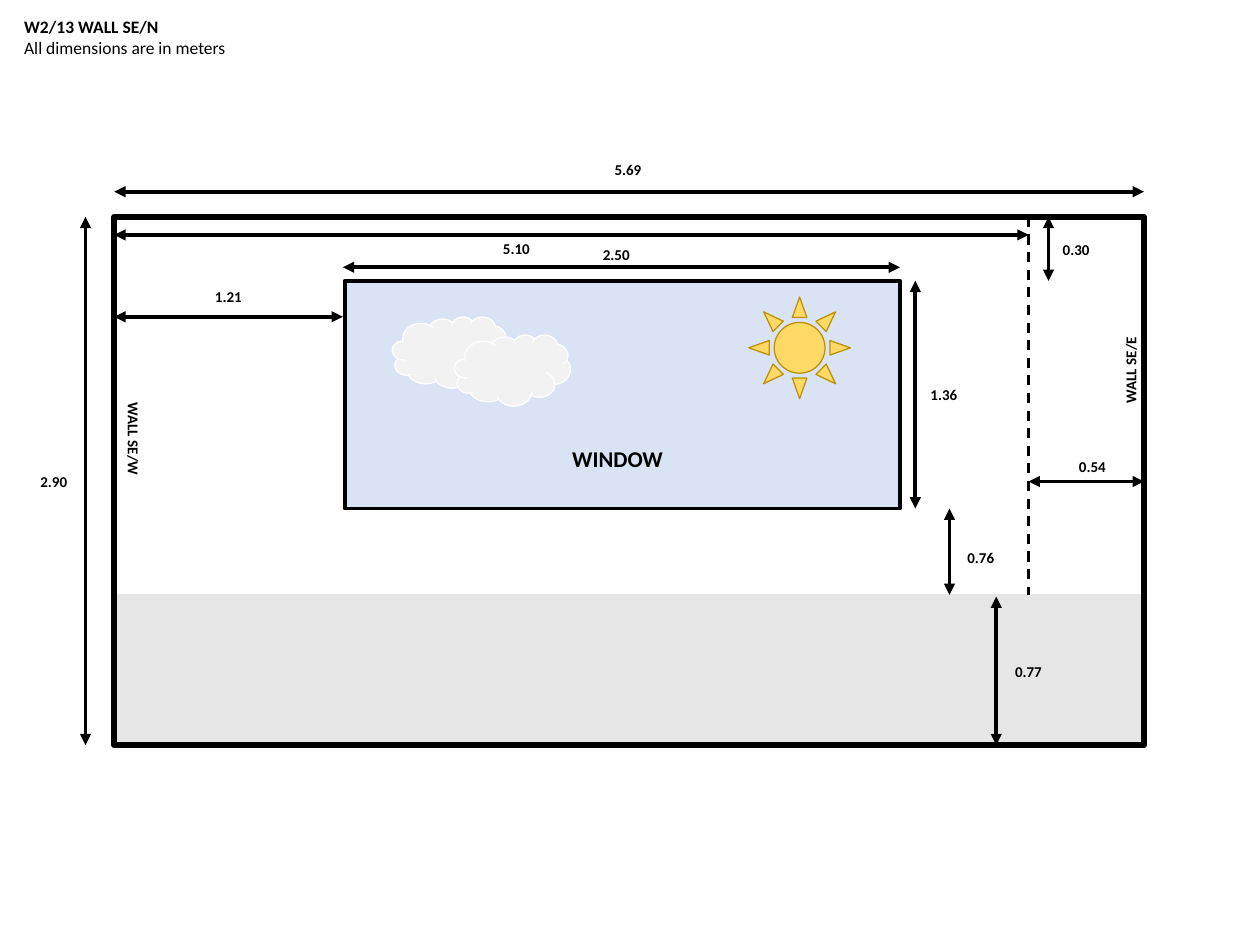
"""Draw the dimensioned elevation of wall SE/N with its window."""
import dataclasses

import lxml.etree
import pptx
import pptx.dml.color
import pptx.enum.dml
import pptx.enum.shapes
import pptx.enum.text
import pptx.oxml.ns
import pptx.util

Inches = pptx.util.Inches
Shape = pptx.enum.shapes.MSO_SHAPE
qn = pptx.oxml.ns.qn


@dataclasses.dataclass(frozen=True)
class Theme:
    font: str = "Calibri"
    ink: str = "000000"
    floor: str = "E7E6E6"
    glass: str = "DAE3F3"
    cloud: str = "F2F2F2"
    cloud_edge: str = "FFFFFF"
    sun: str = "FFD966"
    sun_edge: str = "BF9000"
    label: int = 12
    heading: int = 14
    title: int = 18


def rgb(value):
    return pptx.dml.color.RGBColor.from_string(value)


class Drawing:
    def __init__(self, slide, theme):
        self.slide = slide
        self.theme = theme

    def shape(self, kind, frame, fill, edge, weight):
        shape = self.slide.shapes.add_shape(kind, *map(Inches, frame))
        shape.shadow.inherit = False
        if fill:
            shape.fill.solid()
            shape.fill.fore_color.rgb = rgb(fill)
        else:
            shape.fill.background()
        shape.line.color.rgb = rgb(edge)
        shape.line.width = pptx.util.Pt(weight)

    def line(self, start, end, weight):
        line = self.slide.shapes.add_connector(
            pptx.enum.shapes.MSO_CONNECTOR.STRAIGHT, *map(Inches, start + end))
        line.line.color.rgb = rgb(self.theme.ink)
        line.line.width = pptx.util.Pt(weight)
        lxml.etree.SubElement(line.element.spPr, qn("a:effectLst"))
        return line

    def dashed(self, start, end):
        line = self.line(start, end, 2)
        line.line.dash_style = pptx.enum.dml.MSO_LINE.DASH

    def dimension(self, start, end, value, corner):
        line = self.line(start, end, 3)
        outline = line.line._get_or_add_ln()
        for tag in ("a:headEnd", "a:tailEnd"):
            lxml.etree.SubElement(outline, qn(tag), type="triangle")
        self.text(corner + (0.53, 0.3), [(value, True)], self.theme.label)

    def text(self, frame, lines, size, rotation=0):
        box = self.slide.shapes.add_textbox(*map(Inches, frame))
        box.rotation = rotation
        box.text_frame.word_wrap = True
        box.text_frame.auto_size = pptx.enum.text.MSO_AUTO_SIZE.SHAPE_TO_FIT_TEXT
        for index, (words, bold) in enumerate(lines):
            para = (box.text_frame.add_paragraph() if index
                    else box.text_frame.paragraphs[0])
            span = para.add_run()
            span.text = words
            span.font.color.rgb = rgb(self.theme.ink)
            style = {"name": self.theme.font, "size": pptx.util.Pt(size), "bold": bold}
            for name, value in style.items():
                setattr(span.font, name, value)


def main():
    deck = pptx.Presentation()
    deck.slide_width, deck.slide_height = Inches(14), Inches(10.5)
    theme = Theme()
    drawing = Drawing(deck.slides.add_slide(deck.slide_layouts[6]), theme)

    left, right, top, bottom = 1.27, 12.71, 2.41, 8.28
    floor, partition = 6.61, 11.43
    window_left, window_right, window_top, window_bottom = 3.83, 10, 3.12, 5.65

    wall = (left, top, right - left, bottom - top)
    window = (window_left, window_top,
              window_right - window_left, window_bottom - window_top)
    drawing.shape(Shape.RECTANGLE, (left, floor, right - left, bottom - floor),
                  theme.floor, theme.floor, 1)
    drawing.shape(Shape.RECTANGLE, wall, None, theme.ink, 5)
    drawing.shape(Shape.RECTANGLE, window, theme.glass, theme.ink, 3)
    drawing.dashed((partition, top), (partition, floor))
    for x, y in ((4.36, 3.52), (5.05, 3.72)):
        drawing.shape(Shape.CLOUD, (x, y, 1.29, 0.79),
                      theme.cloud, theme.cloud_edge, 1)
    drawing.shape(Shape.SUN, (8.32, 3.3, 1.13, 1.13), theme.sun, theme.sun_edge, 1)

    widths = (
        (left, right, 2.13, "5.69", (6.73, 1.73)),
        (left, partition, 2.61, "5.10", (5.49, 2.61)),
        (partition, right, 5.35, "0.54", (11.89, 5.04)),
        (left, 3.81, 3.52, "1.21", (2.29, 3.15)),
        (3.81, window_right, 2.97, "2.50", (6.6, 2.68)),
    )
    for start, end, y, value, corner in widths:
        drawing.dimension((start, y), (end, y), value, corner)

    heights = (
        (top, bottom, 0.95, "2.90", (0.35, 5.2)),
        (floor + 0.02, bottom, 11.07, "0.77", (11.18, 7.31)),
        (window_bottom, floor, 10.55, "0.76", (10.65, 6.05)),
        (window_top, window_bottom, 10.17, "1.36", (10.24, 4.24)),
        (top, window_top, 11.65, "0.30", (11.71, 2.62)),
    )
    for start, end, x, value, corner in heights:
        drawing.dimension((x, start), (x, end), value, corner)

    drawing.text((0.17, 0.13, 2.5, 0.57),
                 [("W2/13 WALL SE/N", True), ("All dimensions are in meters", False)],
                 theme.heading)
    drawing.text((6.26, 4.89, 1.3, 0.4), [("WINDOW", True)], theme.title)
    drawing.text((0.97, 4.74, 1.03, 0.3), [("WALL SE/W", True)], theme.label, 90)
    drawing.text((12.03, 3.9, 1.06, 0.3), [("WALL SE/E", True)], theme.label, 270)
    deck.save("out.pptx")


if __name__ == "__main__":
    main()
